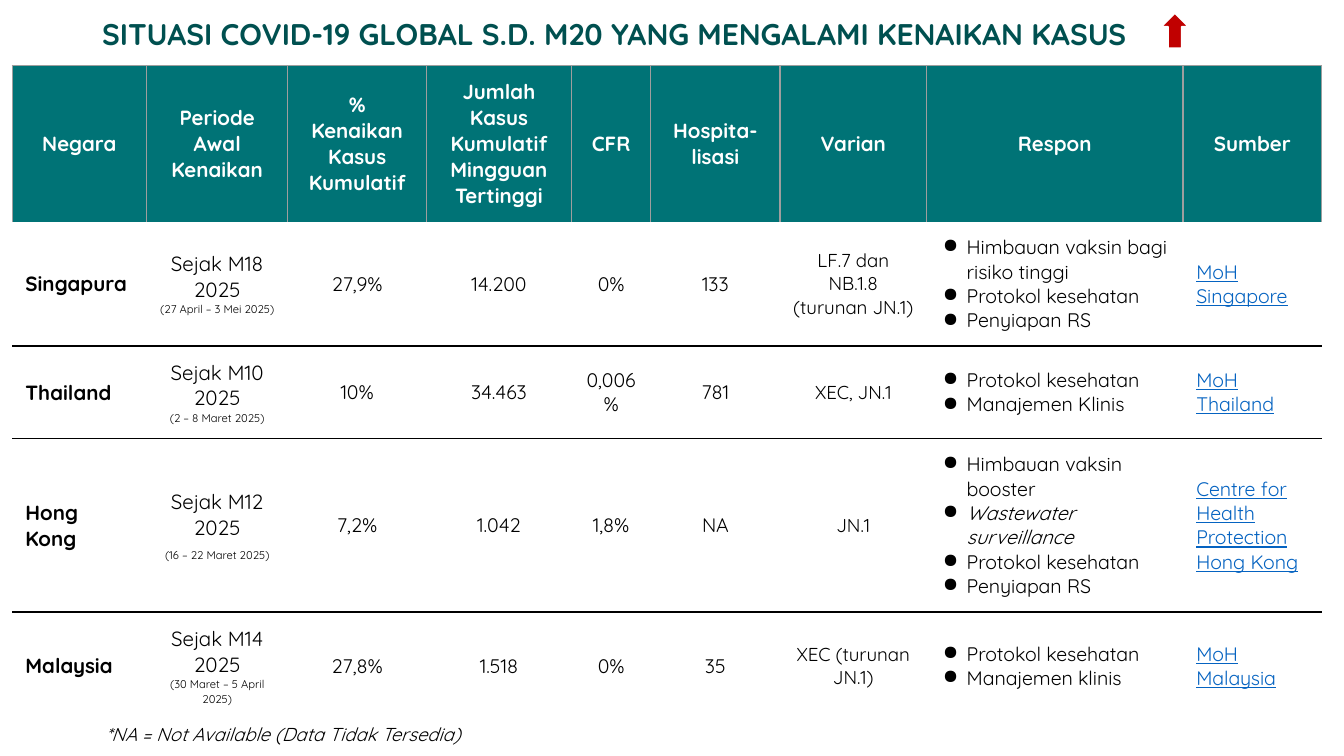
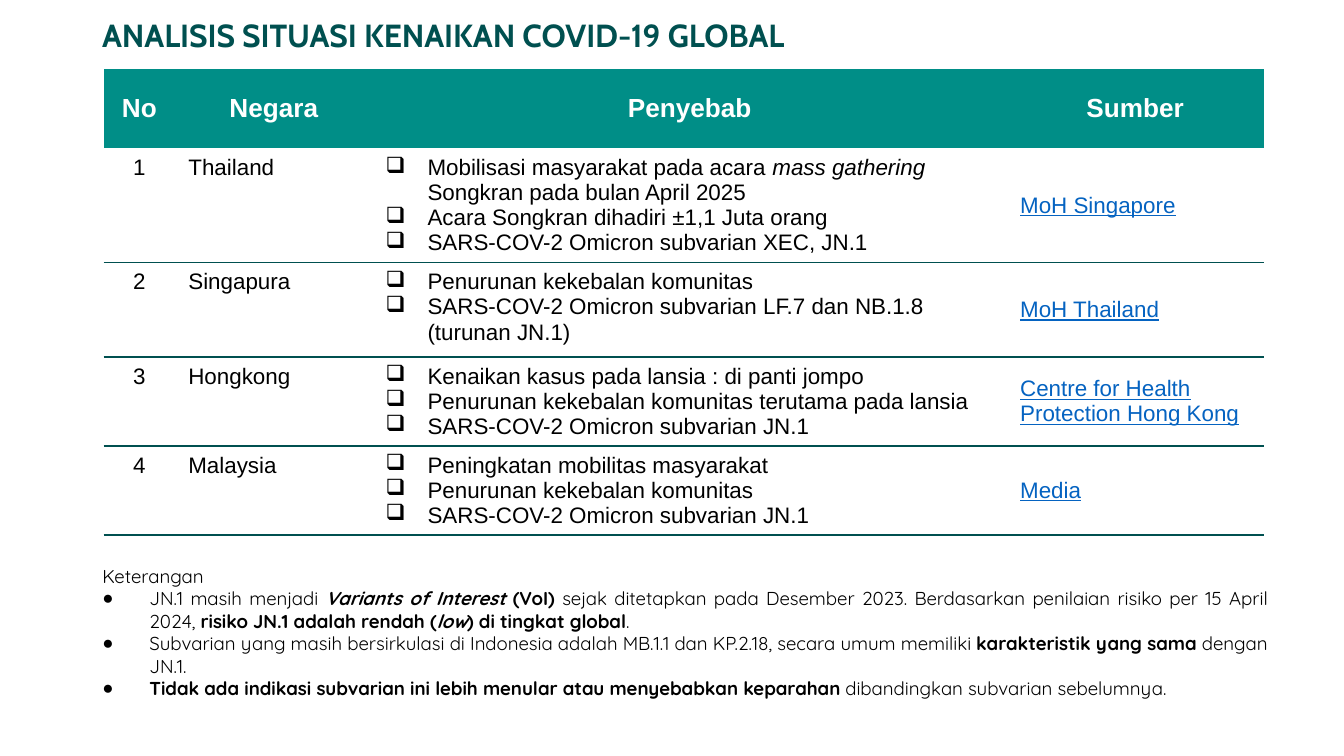
from lxml.etree import SubElement as Sub
from pptx import Presentation
from pptx.dml.color import RGBColor as RGB
from pptx.enum.shapes import MSO_SHAPE as Form
from pptx.enum.text import MSO_ANCHOR as Anchor, MSO_AUTO_SIZE as Fit, PP_ALIGN as Align
from pptx.oxml.ns import qn
from pptx.util import Cm, Pt

# Shared look
DARK, BLACK, WHITE, LINK = "005050", "000000", "FFFFFF", "0563C1"
GREY, RED = "9E9E9E", "C00000"
SANS, ARIAL, CABIN = "Quicksand", "Arial", "Cabin"
PLAIN = "{2D5ABB26-0587-4C30-8999-92F81FD0307C}"  # table style without grid
MID = Align.CENTER

# Case table: country, start, dates, rise, peak, CFR, hospital, variant, response, source
HEADS = ["Negara", "Periode Awal Kenaikan", "% Kenaikan\nKasus Kumulatif",
         "Jumlah Kasus Kumulatif Mingguan Tertinggi", "CFR", "Hospita- lisasi",
         "Varian", "Respon", "Sumber"]
CASES = [
    ("Singapura", "Sejak M18 2025", "(27 April – 3 Mei 2025)", "27,9%", "14.200", "0%", "133",
     "LF.7 dan NB.1.8 (turunan JN.1)",
     ["Himbauan vaksin bagi risiko tinggi", "Protokol kesehatan", "Penyiapan RS"],
     "MoH Singapore"),
    ("Thailand", "Sejak M10 2025", "(2 – 8 Maret 2025)", "10%", "34.463", "0,006%", "781",
     "XEC, JN.1", ["Protokol kesehatan", "Manajemen Klinis"], "MoH Thailand"),
    ("Hong Kong", "Sejak M12 2025", "(16 – 22 Maret 2025)", "7,2%", "1.042", "1,8%", "NA",
     "JN.1",
     ["Himbauan vaksin booster", [("Wastewater surveillance", "i")],
      "Protokol kesehatan", "Penyiapan RS"],
     "Centre for Health Protection Hong Kong"),
    ("Malaysia", "Sejak M14 2025", "(30 Maret – 5 April 2025)", "27,8%", "1.518", "0%", "35",
     "XEC (turunan JN.1)", ["Protokol kesehatan", "Manajemen klinis"], "MoH Malaysia"),
]

# Cause table: country, causes, source
CAUSES = [
    ("Thailand",
     [[("Mobilisasi masyarakat pada acara ", ""), ("mass gathering ", "i"),
       ("Songkran pada bulan April 2025", "")],
      "Acara Songkran dihadiri ±1,1 Juta orang",
      "SARS-COV-2 Omicron subvarian XEC, JN.1"],
     "MoH Singapore"),
    ("Singapura",
     ["Penurunan kekebalan komunitas",
      "SARS-COV-2 Omicron subvarian LF.7 dan NB.1.8 (turunan JN.1)"],
     "MoH Thailand"),
    ("Hongkong",
     ["Kenaikan kasus pada lansia : di panti jompo",
      "Penurunan kekebalan komunitas terutama pada lansia",
      "SARS-COV-2 Omicron subvarian JN.1"],
     "Centre for Health Protection Hong Kong"),
    ("Malaysia",
     ["Peningkatan mobilitas masyarakat", "Penurunan kekebalan komunitas",
      "SARS-COV-2 Omicron subvarian JN.1"],
     "Media"),
]

NOTES = [
    [("JN.1 masih menjadi ", ""), ("Variants of Interest", "bi"), (" (VoI) ", "b"),
     ("sejak ditetapkan pada Desember 2023. Berdasarkan penilaian risiko per 15 April 2024, ", ""),
     ("risiko JN.1 adalah rendah (", "b"), ("low", "bi"), (") di tingkat global", "b"), (".", "")],
    [("Subvarian yang masih bersirkulasi di Indonesia adalah MB.1.1 dan KP.2.18, "
      "secara umum memiliki ", ""),
     ("karakteristik yang sama ", "b"), ("dengan JN.1.", "")],
    [("Tidak ada indikasi subvarian ini lebih menular atau menyebabkan keparahan ", "b"),
     ("dibandingkan subvarian sebelumnya.", "")],
]


def tint(hue):
    return RGB.from_string(hue)


def write(frame, text, size, face=SANS, hue=BLACK, bold=False, slant=False, line=False,
          align=Align.LEFT, mark=None, left=0, hang=0, gap=0):
    """Add one paragraph; text is a string or a list of (words, style)."""
    last = frame.paragraphs[-1]
    para = frame.add_paragraph() if last.runs else last
    # Indent and bullet
    prop = para._p.get_or_add_pPr()
    prop.set("marL", str(Cm(left)))
    prop.set("indent", str(-Cm(hang)))
    if mark:
        Sub(Sub(prop, qn("a:buClr")), qn("a:srgbClr"), val=hue)
        Sub(prop, qn("a:buChar"), char=mark)
    else:
        Sub(prop, qn("a:buNone"))
    # Paragraph font
    para.alignment = align
    para.space_before = Pt(gap)
    font = para.font
    font.name, font.size = face, Pt(size)
    font.bold, font.italic, font.underline = bold, slant, line
    font.color.rgb = tint(hue)
    # Runs
    for words, style in ([(text, "")] if isinstance(text, str) else text):
        run = para.add_run()
        run.text = words
        if "b" in style:
            run.font.bold = True
        if "i" in style:
            run.font.italic = True
    return para


def place(shape, left, top, width, height):
    shape.left, shape.top = Cm(left), Cm(top)
    shape.width, shape.height = Cm(width), Cm(height)


def pad(item, side, top):
    item.margin_left = item.margin_right = Cm(side)
    item.margin_top = item.margin_bottom = Cm(top)


def head(slide, text, size, face, top):
    """Slide title."""
    shape = slide.shapes.title
    place(shape, 1.75, top, 21.9, 0.86)
    frame = shape.text_frame
    pad(frame, 0.18, 0.1)
    frame.auto_size, frame.vertical_anchor = Fit.NONE, Anchor.MIDDLE
    write(frame, text, size, face, DARK, bold=True).line_spacing = 0.9


def grid(slide, left, top, cols, rows):
    """Plain table with the given column widths and row heights."""
    shape = slide.shapes.add_table(len(rows), len(cols), Cm(left), Cm(top),
                                   Cm(sum(cols)), Cm(sum(rows)))
    table = shape.table
    table.first_row = table.horz_banding = False
    table._tbl.tblPr.find(qn("a:tableStyleId")).text = PLAIN
    for col, width in zip(table.columns, cols):
        col.width = Cm(width)
    for row, height in zip(table.rows, rows):
        row.height = Cm(height)
    return table


def dress(cell, fill=None, edges="", hue=BLACK, width=1, side=0.25, top=0.25,
          anchor=Anchor.MIDDLE):
    """Fill, borders and padding of a cell; edges is drawn from LRTB."""
    pad(cell, side, top)
    cell.vertical_anchor = anchor
    if fill:
        cell.fill.solid()
        cell.fill.fore_color.rgb = tint(fill)
    else:
        cell.fill.background()
    prop = cell._tc.get_or_add_tcPr()
    for i, edge in enumerate(e for e in "LRTB" if e in edges):
        rule = Sub(prop, qn("a:ln" + edge), w=str(Pt(width)))
        Sub(Sub(rule, qn("a:solidFill")), qn("a:srgbClr"), val=hue)
        prop.insert(i, rule)
    return cell.text_frame


def cases(slide):
    """Countries with rising cases."""
    table = grid(slide, 0.23, 1.24,
                 [2.54, 2.67, 2.62, 2.74, 1.5, 2.44, 2.77, 4.85, 2.62],
                 [2.95, 2.34, 1.75, 3.28, 2.03])
    for c, text in enumerate(HEADS):
        frame = dress(table.cell(0, c), "007376", "LRT", GREY, 0.75)
        for part in text.split("\n"):
            write(frame, part, 11, hue=WHITE, bold=True, align=MID)
    for r, (land, start, dates, *facts, kind, steps, source) in enumerate(CASES, 1):
        edges = "B" if r < len(CASES) else ""
        cells = [dress(cell, WHITE, edges) for cell in table.rows[r].cells]
        write(cells[0], land, 11, bold=True)
        write(cells[1], start, 11, align=MID)
        write(cells[1], dates, 6, align=MID, gap=4 if land == "Hong Kong" else 0)
        for frame, fact in zip(cells[2:6], facts):
            write(frame, fact, 10.5, align=MID)
        write(cells[6], kind, 10, align=MID)
        for step in steps:
            write(cells[7], step, 10.5, mark="●", left=0.51, hang=0.45)
        write(cells[8], source, 10.5, hue=LINK, line=True)


def causes(slide):
    """Reasons for the rise in each country."""
    table = grid(slide, 1.96, 1.3, [1.35, 3.73, 11.99, 4.85],
                 [1.5, 2.16, 1.78, 1.68, 1.68])
    for c, text in enumerate(["No", "Negara", "Penyebab", "Sumber"]):
        frame = dress(table.cell(0, c), "008E87", top=0.13)
        write(frame, text, 14, ARIAL, WHITE, bold=True, align=MID)
    for r, (land, items, source) in enumerate(CAUSES, 1):
        cells = [dress(table.cell(r, c), None, "B", DARK, top=0.13, anchor=Anchor.TOP)
                 for c in range(3)]
        write(cells[0], str(r), 12, ARIAL, align=MID)
        write(cells[1], land, 12, ARIAL)
        for item in items:
            write(cells[2], item, 12, ARIAL, mark="❑", left=0.79, hang=0.79)
        frame = dress(table.cell(r, 3), None, "B", DARK)
        write(frame, source, 12, ARIAL, LINK, line=True)


def arrow(slide):
    """Red sign for rising cases."""
    shape = slide.shapes.add_shape(Form.UP_ARROW, Cm(21.95), Cm(0.25), Cm(0.51), Cm(0.66))
    shape.shadow.inherit = False
    shape.fill.solid()
    shape.fill.fore_color.rgb = tint(RED)
    shape.line.color.rgb = tint(WHITE)
    shape.line.width = Pt(0.75)


def legend(slide):
    """Note below the case table."""
    box = slide.shapes.add_textbox(Cm(1.75), Cm(13.44), Cm(11.91), Cm(0.58))
    frame = box.text_frame
    frame.word_wrap = True
    pad(frame, 0.25, 0.25)
    write(frame, "*NA = Not Available (Data Tidak Tersedia)", 10, slant=True)


def notes(slide):
    """Remarks below the cause table."""
    body = slide.placeholders[1]
    place(body, 1.3, 10.54, 22.91, 3.25)
    frame = body.text_frame
    frame.auto_size, frame.vertical_anchor = Fit.NONE, Anchor.TOP
    write(frame, "Keterangan", 10, align=Align.JUSTIFY, left=0.38)
    for note in NOTES:
        write(frame, note, 10, align=Align.JUSTIFY, mark="●", left=1.27, hang=0.89)


def main():
    deck = Presentation()
    deck.slide_width, deck.slide_height = Cm(25.4), Cm(14.28)

    # Slide 1: situation
    slide = deck.slides.add_slide(deck.slide_layouts[5])
    head(slide, "SITUASI COVID-19 GLOBAL S.D. M20 YANG MENGALAMI KENAIKAN KASUS", 16, SANS, 0.25)
    cases(slide)
    arrow(slide)
    legend(slide)

    # Slide 2: analysis
    slide = deck.slides.add_slide(deck.slide_layouts[1])
    head(slide, "ANALISIS SITUASI KENAIKAN COVID-19 GLOBAL", 17.1, CABIN, 0.28)
    causes(slide)
    notes(slide)

    deck.save("out.pptx")


if __name__ == "__main__":
    main()
